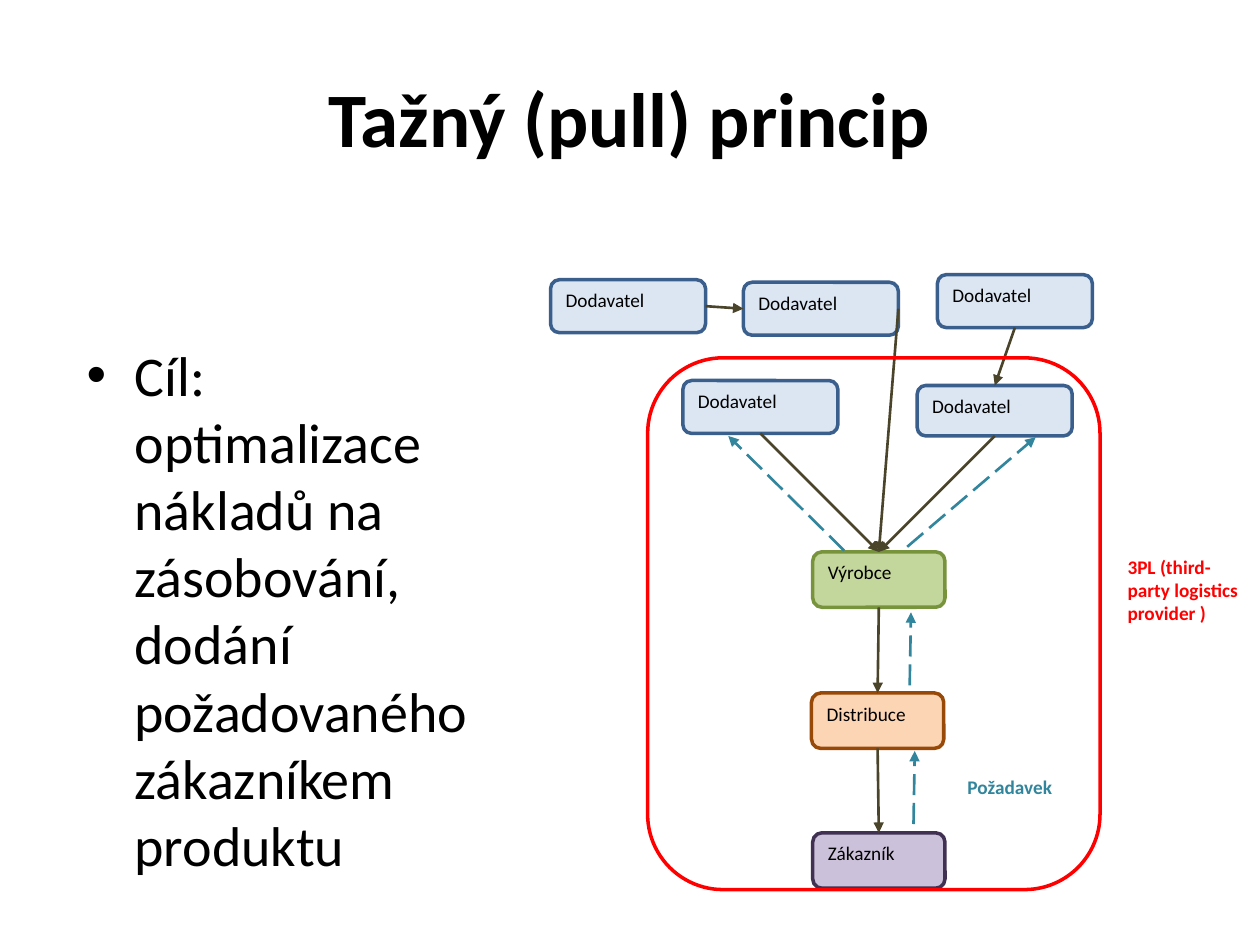
from lxml.etree import SubElement
from pptx import Presentation
from pptx.dml.color import RGBColor
from pptx.enum.dml import MSO_LINE
from pptx.enum.shapes import MSO_CONNECTOR, MSO_SHAPE
from pptx.enum.text import MSO_ANCHOR, PP_ALIGN
from pptx.oxml.ns import qn
from pptx.util import Inches, Pt

BLACK = RGBColor(0x00, 0x00, 0x00)
RED = RGBColor(0xFF, 0x00, 0x00)
TEAL = RGBColor(0x31, 0x85, 0x9C)
OLIVE = RGBColor(0x4A, 0x45, 0x2A)
PALE, BLUE = RGBColor(0xDC, 0xE6, 0xF2), RGBColor(0x3A, 0x5F, 0x8C)
LIME, GREEN = RGBColor(0xC3, 0xD6, 0x9B), RGBColor(0x77, 0x93, 0x3C)
PEACH, BROWN = RGBColor(0xFC, 0xD5, 0xB5), RGBColor(0x98, 0x48, 0x07)
LILAC, PLUM = RGBColor(0xCC, 0xC1, 0xDA), RGBColor(0x40, 0x31, 0x52)

WIDTH, HEIGHT = Inches(10), Inches(7.5)
COLS, ROWS = 100, 75
TOP, LEFT, BOTTOM, RIGHT = range(4)
LABEL = {"name": "Calibri", "size": Pt(11), "bold": False}
STRONG = {**LABEL, "bold": True}
TITLE = {**STRONG, "size": Pt(44)}
BODY = {**LABEL, "size": Pt(32)}

SUPPLY = "Dodavatel"
NODES = {
    "near": (SUPPLY, (14.2, 10.2, 12.3, 4.2), PALE, BLUE),
    "side": (SUPPLY, (32.8, 10.6, 12.3, 4), PALE, BLUE),
    "maker": ("Výrobce", (24.5, 23.8, 10.5, 4.4), LIME, GREEN),
    "depot": ("Distribuce", (24.4, 35, 10.5, 4.4), PEACH, BROWN),
    "buyer": ("Zákazník", (24.5, 45.1 + 1, 10.5, 4.4), LILAC, PLUM),
    "first": (SUPPLY, (3.7, 2.2, 12.3, 4.2), PALE, BLUE),
    "next": (SUPPLY, (19, 2.4, 12.3, 4.2), PALE, BLUE),
    "last": (SUPPLY, (34.4, 1.8, 12.3, 4.2), PALE, BLUE),
}
FLOWS = [
    ("near", BOTTOM, "maker", TOP),
    ("side", BOTTOM, "maker", TOP),
    ("maker", BOTTOM, "depot", TOP),
    ("depot", BOTTOM, "buyer", TOP),
    ("first", RIGHT, "next", LEFT),
    ("next", RIGHT, "maker", TOP),
    ("last", BOTTOM, "side", TOP),
]
ORDERS = [
    (32.5, 45.4, 32.6, 39.6),
    (32.2, 34.4, 32.3, 28.6),
    (32, 23.4, 42.2, 14.7),
    (27, 23.7, 17.8, 14.6),
]


def put(item, style):
    """Set each format value of a style on an item."""
    for name, value in style.items():
        setattr(item, name, value)


def grid(box, part):
    """Turn columns and rows within a box into slide lengths."""
    x, y, *size = part
    cells = (box[0] + x, box[1] + y, *size)
    units = (WIDTH / COLS, HEIGHT / ROWS) * 2
    return [round(cell * unit) for cell, unit in zip(cells, units)]


def write(shape, text, style, color=BLACK, align=PP_ALIGN.LEFT, anchor=MSO_ANCHOR.TOP):
    """Fill a shape with one styled paragraph and return it."""
    put(shape.text_frame, {"word_wrap": True, "vertical_anchor": anchor})
    para = shape.text_frame.paragraphs[0]
    para.alignment = align
    run = para.add_run()
    run.text = text
    put(run.font, style)
    run.font.color.rgb = color
    return para


def panel(slide, place, line, fill=None):
    """Draw a rounded box with an outline and an optional fill."""
    shape = slide.shapes.add_shape(MSO_SHAPE.ROUNDED_RECTANGLE, *place)
    shape.shadow.inherit = False
    if fill is None:
        shape.fill.background()
    else:
        shape.fill.solid()
        shape.fill.fore_color.rgb = fill
    shape.line.color.rgb = line
    shape.line.width = Pt(2)
    return shape


def arrow(slide, ends, color, dash=None):
    """Draw a straight arrow between two points."""
    link = slide.shapes.add_connector(MSO_CONNECTOR.STRAIGHT, *ends)
    link.line.color.rgb = color
    put(link.line, {"width": Pt(1.5), "dash_style": dash})
    frame = link.element.spPr
    SubElement(frame.find(qn("a:ln")), qn("a:tailEnd"), type="triangle")
    SubElement(frame, qn("a:effectLst"))
    return link


def title(slide, box):
    """Place the slide title in its box."""
    shape = slide.shapes.add_textbox(*grid((0, 0), box))
    write(shape, "Tažný (pull) princip", TITLE, align=PP_ALIGN.CENTER, anchor=MSO_ANCHOR.MIDDLE)


def body(slide, box):
    """Place the bulleted goal in its box."""
    shape = slide.shapes.add_textbox(*grid((0, 0), box))
    text = "Cíl: optimalizace nákladů na zásobování, dodání požadovaného zákazníkem produktu"
    props = write(shape, text, BODY)._p.get_or_add_pPr()
    hang = Inches(0.38)
    props.set("marL", str(hang))
    props.set("indent", str(-hang))
    SubElement(props, qn("a:buFont"), typeface="Arial")
    SubElement(props, qn("a:buChar"), char="•")


def chain(slide, box):
    """Place the supply chain with its flows, orders and frame."""
    nodes = {}
    for key, (text, part, fill, line) in NODES.items():
        nodes[key] = panel(slide, grid(box, part), line, fill)
        write(nodes[key], text, LABEL)
    for start, out, end, into in FLOWS:
        link = arrow(slide, (0, 0, 0, 0), OLIVE)
        link.begin_connect(nodes[start], out)
        link.end_connect(nodes[end], into)
    for order in ORDERS:
        ends = grid(box, order[:2]) + grid(box, order[2:])
        arrow(slide, ends, TEAL, MSO_LINE.LONG_DASH)
    panel(slide, grid(box, (11.4, 8.4, 35.9, 42.2)), RED)
    notes = [
        ("Požadavek", (35.8, 41, 10.9, 6.9), TEAL),
        ("3PL (third-party logistics provider )", (48.5, 23.6, 11.5, 13.7), RED),
    ]
    for text, part, color in notes:
        write(slide.shapes.add_textbox(*grid(box, part)), text, STRONG, color)


def main():
    """Build the slide and save it."""
    deck = Presentation()
    put(deck, {"slide_width": WIDTH, "slide_height": HEIGHT})
    slide = deck.slides.add_slide(deck.slide_layouts[6])
    title(slide, (5, 3, 90, 12.5))
    body(slide, (5.9, 26.5, 34.6, 42.5))
    chain(slide, (40, 20))
    deck.save("out.pptx")


if __name__ == "__main__":
    main()
